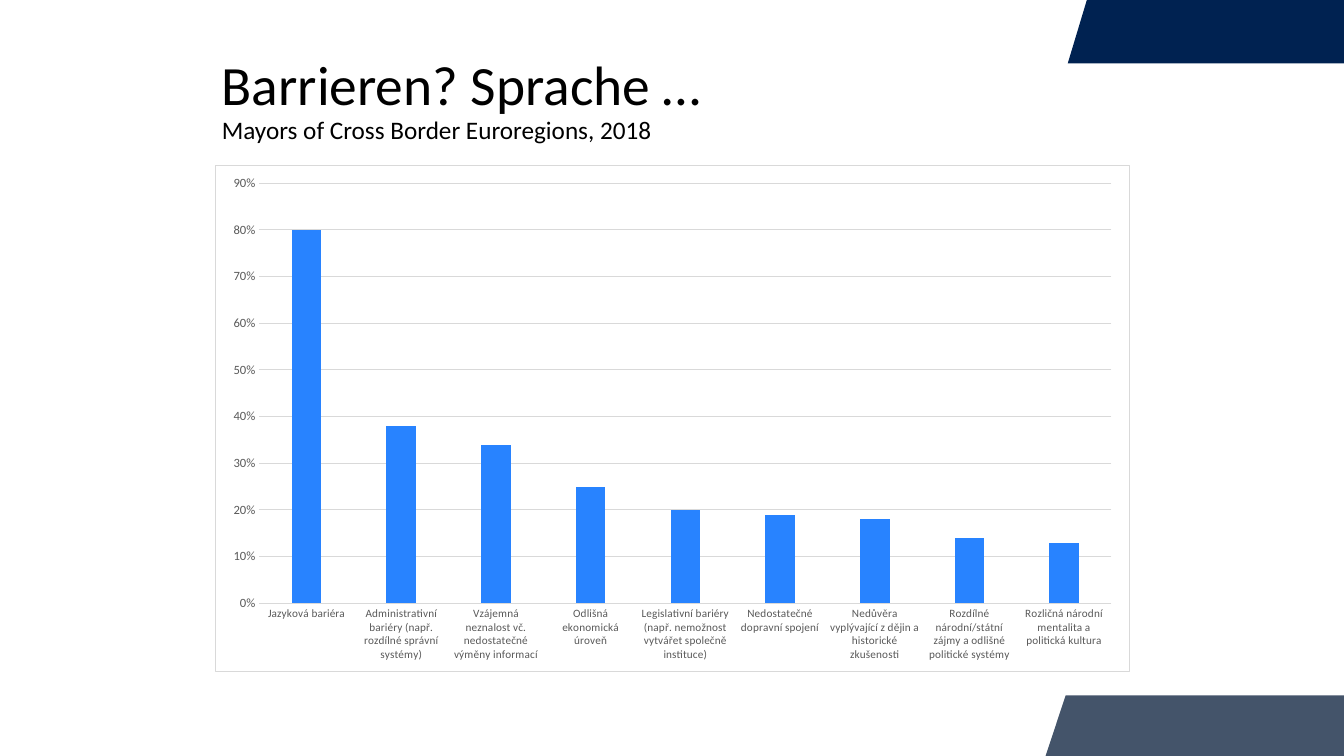
from dataclasses import dataclass

import pptx
import pptx.chart.data
import pptx.dml.color
import pptx.enum.chart
import pptx.enum.text
import pptx.oxml
import pptx.oxml.ns
import pptx.util

Inches = pptx.util.Inches
Pt = pptx.util.Pt


@dataclass(frozen=True)
class Theme:
    font: str = "Calibri"
    navy: str = "002251"
    slate: str = "44546A"
    bar: str = "2883FF"
    text: str = "000000"
    label: str = "595959"
    rule: str = "D9D9D9"
    paper: str = "FFFFFF"
    title_size: float = 39.6
    subtitle_size: float = 18
    chart_size: float = 10
    value_size: float = 9
    category_size: float = 8
    rule_width: float = 0.75


THEME = Theme()
SLIDE_W, SLIDE_H = 13.33, 7.5

BARRIERS = {
    "Jazyková bariéra": 0.8,
    "Administrativní bariéry (např. rozdílné správní systémy)": 0.38,
    "Vzájemná neznalost vč. nedostatečné výměny informací": 0.34,
    "Odlišná ekonomická úroveň": 0.25,
    "Legislativní bariéry (např. nemožnost vytvářet společně instituce)": 0.2,
    "Nedostatečné dopravní spojení": 0.19,
    "Nedůvěra vyplývající z dějin a historické zkušenosti": 0.18,
    "Rozdílné národní/státní zájmy a odlišné politické systémy": 0.14,
    "Rozličná národní mentalita a politická kultura": 0.13,
}


def rgb(color):
    return pptx.dml.color.RGBColor.from_string(color)


def format_font(font, size, color):
    font.name = THEME.font
    font.size = Pt(size)
    font.bold = False
    font.color.rgb = rgb(color)


def format_line(line, color):
    line.color.rgb = rgb(color)
    line.width = Pt(THEME.rule_width)


def add_text(p, text, *, size, color=THEME.text):
    r = p.add_run()
    r.text = text
    format_font(r.font, size, color)
    return r


def add_corner_band(s, left, top, width, height, *, slant, color):
    right, bottom = left + width, top + height
    builder = s.shapes.build_freeform(Inches(left), Inches(bottom))
    corners = [(left + slant, top), (right, top), (right, bottom)]
    builder.add_line_segments([(Inches(x), Inches(y)) for x, y in corners], close=True)
    sp = builder.convert_to_shape()
    sp.shadow.inherit = False
    sp.fill.solid()
    sp.fill.fore_color.rgb = rgb(color)
    sp.line.fill.background()


def add_title(s, left, top, width, height, *, title, subtitle):
    sp = s.shapes.title
    sp.left, sp.top = Inches(left), Inches(top)
    sp.width, sp.height = Inches(width), Inches(height)
    tf = sp.text_frame
    tf.word_wrap = True
    tf.auto_size = pptx.enum.text.MSO_AUTO_SIZE.NONE
    tf.vertical_anchor = pptx.enum.text.MSO_ANCHOR.MIDDLE
    p = tf.paragraphs[0]
    p.alignment = pptx.enum.text.PP_ALIGN.LEFT
    p.line_spacing = 0.9
    add_text(p, title, size=THEME.title_size)
    p.add_line_break()
    add_text(p, subtitle, size=THEME.subtitle_size)


def frame_chart(chart):
    frame = pptx.oxml.parse_xml(
        f'<c:spPr {pptx.oxml.ns.nsdecls("c", "a")}>'
        f'<a:solidFill><a:srgbClr val="{THEME.paper}"/></a:solidFill>'
        f'<a:ln w="{Pt(THEME.rule_width)}"><a:solidFill>'
        f'<a:srgbClr val="{THEME.rule}"/></a:solidFill></a:ln></c:spPr>'
    )
    chart.element.find(pptx.oxml.ns.qn("c:chart")).addnext(frame)


def format_axis(axis, size):
    axis.major_tick_mark = pptx.enum.chart.XL_TICK_MARK.NONE
    axis.minor_tick_mark = pptx.enum.chart.XL_TICK_MARK.NONE
    format_font(axis.tick_labels.font, size, THEME.label)


def add_barrier_chart(s, left, top, width, height, *, barriers):
    data = pptx.chart.data.CategoryChartData(number_format="0%")
    data.categories = barriers.keys()
    data.add_series("Series 1", barriers.values())
    chart = s.shapes.add_chart(
        pptx.enum.chart.XL_CHART_TYPE.COLUMN_CLUSTERED,
        Inches(left), Inches(top), Inches(width), Inches(height), data,
    ).chart
    chart.has_legend = False
    chart.has_title = False
    format_font(chart.font, THEME.chart_size, THEME.text)
    frame_chart(chart)

    plot = chart.plots[0]
    plot.gap_width = 219
    plot.overlap = -27
    plot.vary_by_categories = False
    fill = plot.series[0].format.fill
    fill.solid()
    fill.fore_color.rgb = rgb(THEME.bar)

    format_axis(chart.category_axis, THEME.category_size)
    format_line(chart.category_axis.format.line, THEME.rule)

    axis = chart.value_axis
    format_axis(axis, THEME.value_size)
    axis.minimum_scale, axis.maximum_scale, axis.major_unit = 0, 0.9, 0.1
    axis.tick_labels.number_format = "0%"
    axis.tick_labels.number_format_is_linked = False
    axis.format.line.fill.background()
    axis.has_major_gridlines = True
    format_line(axis.major_gridlines.format.line, THEME.rule)


def add_barrier_slide(prs):
    s = prs.slides.add_slide(prs.slide_layouts[5])
    add_corner_band(s, 10.37, 6.9, SLIDE_W - 10.37, 0.6, slant=0.2, color=THEME.slate)
    add_corner_band(s, 10.59, 0, SLIDE_W - 10.59, 0.63, slant=0.19, color=THEME.navy)
    add_title(s, 2.1, 0.5, 9.08, 1.01, title="Barrieren? Sprache …",
              subtitle="Mayors of Cross Border Euroregions, 2018")
    add_barrier_chart(s, 2.13, 1.64, 9.08, 5.03, barriers=BARRIERS)


def main():
    prs = pptx.Presentation()
    prs.slide_width, prs.slide_height = Inches(SLIDE_W), Inches(SLIDE_H)
    add_barrier_slide(prs)
    prs.save("out.pptx")


if __name__ == "__main__":
    main()
